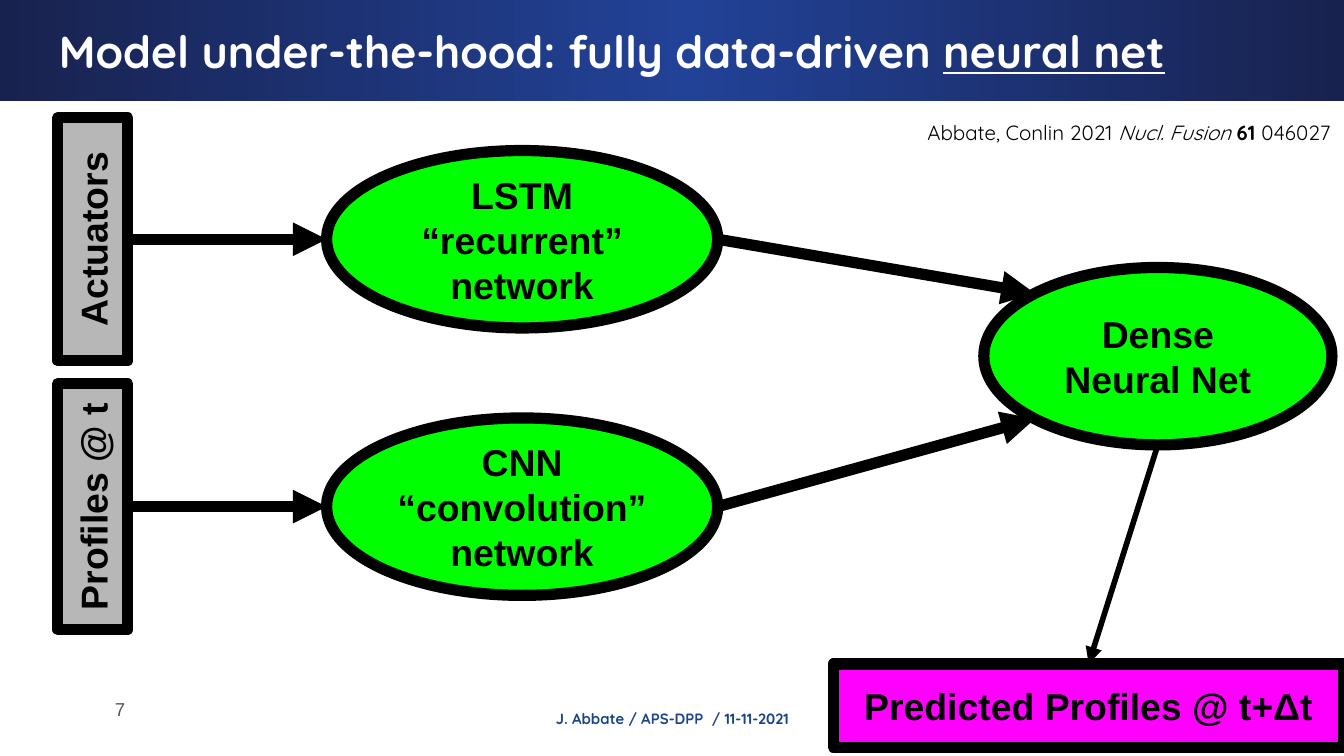
from copy import deepcopy
from dataclasses import dataclass
from math import sqrt

from lxml.etree import SubElement
from pptx import Presentation
from pptx.dml.color import RGBColor
from pptx.enum.shapes import MSO_CONNECTOR, MSO_SHAPE
from pptx.enum.text import MSO_ANCHOR, MSO_AUTO_SIZE, PP_ALIGN
from pptx.oxml.ns import qn
from pptx.util import Inches, Pt


@dataclass(frozen=True)
class Theme:
    heading: str = "Quicksand"
    body: str = "Arial"
    navy: str = "18224F"
    blue: str = "224297"
    footer: str = "1C4587"
    white: str = "FFFFFF"
    black: str = "000000"
    number: str = "595959"
    input: str = "B7B7B7"
    network: str = "00FF00"
    output: str = "FF00FF"
    title_size: int = 24
    node_size: int = 20
    cite_size: int = 11
    number_size: int = 10
    footer_size: int = 8
    thick: int = 6
    thin: int = 3


@dataclass(frozen=True)
class Box:
    x: float
    y: float
    w: float
    h: float

    @property
    def cx(self):
        return self.x + self.w / 2

    @property
    def cy(self):
        return self.y + self.h / 2

    @property
    def lengths(self):
        return [Inches(v) for v in (self.x, self.y, self.w, self.h)]

    def turned(self):
        return Box(self.cx - self.h / 2, self.cy - self.w / 2, self.h, self.w)

    def diagonal(self, side):
        return (self.cx - self.w / 2 / sqrt(2), self.cy + side * self.h / 2 / sqrt(2))


T = Theme()


def rgb(value):
    return RGBColor.from_string(value)


def write(shape, runs, size, font, color, bold=False, align=PP_ALIGN.CENTER,
          anchor=MSO_ANCHOR.MIDDLE):
    tf = shape.text_frame
    tf.word_wrap = True
    tf.vertical_anchor = anchor
    tf.margin_left = tf.margin_right = tf.margin_top = tf.margin_bottom = Inches(0.1)
    p = tf.paragraphs[0]
    p.alignment = align
    p.font.size = Pt(size)
    p.font.name = font
    p.font.bold = bold
    p.font.color.rgb = rgb(color)
    for text, style in runs:
        r = p.add_run()
        r.text = text
        for name, value in style.items():
            setattr(r.font, name, value)


def add_label(slide, box, runs, *args, grow=False, **kwargs):
    label = slide.shapes.add_textbox(*box.lengths)
    write(label, runs, *args, **kwargs)
    if grow:
        label.text_frame.auto_size = MSO_AUTO_SIZE.SHAPE_TO_FIT_TEXT


def add_header(slide, box):
    band = slide.shapes.add_shape(MSO_SHAPE.RECTANGLE, *box.lengths)
    band.shadow.inherit = False
    band.line.fill.background()
    band.fill.gradient()
    band.fill.gradient_angle = 0
    stops = band._element.spPr.find(".//" + qn("a:gsLst"))
    stops.insert(1, deepcopy(stops[0]))
    for stop, place, color in zip(band.fill.gradient_stops, (0, 0.51, 1),
                                  (T.navy, T.blue, T.navy)):
        stop.position = place
        stop.color.rgb = rgb(color)
    title = Box(box.x + 0.34, box.y + 0.07, box.w - 0.68, 0.63)
    add_label(slide, title,
              [("Model under-the-hood: fully data-driven ", {}),
               ("neural net", {"underline": True})],
              T.title_size, T.heading, T.white, bold=True, align=PP_ALIGN.LEFT)


def add_node(slide, box, text, color, kind=MSO_SHAPE.RECTANGLE, upright=False):
    placed = box.turned() if upright else box
    sp = slide.shapes.add_shape(kind, *placed.lengths)
    sp.rotation = 270 if upright else 0
    sp.shadow.inherit = False
    sp.fill.solid()
    sp.fill.fore_color.rgb = rgb(color)
    sp.line.color.rgb = rgb(T.black)
    sp.line.width = Pt(T.thick)
    SubElement(sp.line._get_or_add_ln(), qn("a:round"))
    write(sp, [(text, {})], T.node_size, T.body, T.black, bold=True)


def add_arrow(slide, start, end, width=T.thick):
    line = slide.shapes.add_connector(
        MSO_CONNECTOR.STRAIGHT, *[Inches(v) for v in (*start, *end)])
    line.line.color.rgb = rgb(T.black)
    line.line.width = Pt(width)
    SubElement(line.line._get_or_add_ln(), qn("a:tailEnd"), type="triangle")
    SubElement(line._element.spPr, qn("a:effectLst"))


def add_network(slide, box):
    dense = Box(box.x + 6.89, box.y + 1.12, 2.59, 1.32)
    output = Box(box.x + 5.77, box.y + 4.07, 3.8, 0.62)
    branches = [("Actuators", 1.81, "LSTM “recurrent” network", -1),
                ("Profiles @ t", 1.83, "CNN “convolution” network", 1)]
    for row, (source, height, network, side) in enumerate(branches):
        middle = box.y + 0.91 + 1.99 * row
        inlet = Box(box.x, middle - height / 2, 0.52, height)
        encoder = Box(box.x + 2, middle - 0.66, 2.91, 1.32)
        add_arrow(slide, (inlet.x + inlet.w, encoder.cy), (encoder.x, encoder.cy))
        add_arrow(slide, (encoder.x + encoder.w, encoder.cy), dense.diagonal(side))
        add_node(slide, inlet, source, T.input, upright=True)
        add_node(slide, encoder, network, T.network, MSO_SHAPE.OVAL)
    add_arrow(slide, (dense.cx, dense.y + dense.h), (output.cx, output.y), T.thin)
    add_node(slide, dense, "Dense Neural Net", T.network, MSO_SHAPE.OVAL)
    add_node(slide, output, "Predicted Profiles @ t+Δt", T.output)


def add_citation(slide, box):
    add_label(slide, box,
              [("Abbate, Conlin 2021 ", {}), ("Nucl. Fusion", {"italic": True}),
               (" 61 ", {"bold": True}), ("046027", {})],
              T.cite_size, T.heading, T.black, anchor=MSO_ANCHOR.TOP, grow=True)


def add_footer(slide, box):
    add_label(slide, Box(box.x + 1.05, box.y + 0.15, 7.05, 0.24),
              [("J. Abbate / APS-DPP  / 11-11-2021", {})],
              T.footer_size, T.heading, T.footer, bold=True,
              anchor=MSO_ANCHOR.TOP, grow=True)
    add_label(slide, Box(box.x, box.y, 0.6, box.h), [("7", {})],
              T.number_size, T.body, T.number, align=PP_ALIGN.RIGHT)


def main():
    prs = Presentation()
    prs.slide_width = Inches(10)
    prs.slide_height = prs.slide_width * 9 // 16
    slide = prs.slides.add_slide(prs.slide_layouts[6])
    add_footer(slide, Box(0.43, 5.06, 8.1, 0.43))
    add_header(slide, Box(0, -0.01, 10, 0.76))
    add_network(slide, Box(0.43, 0.87, 9.57, 4.69))
    add_citation(slide, Box(6.79, 0.8, 3.22, 0.39))
    prs.save("out.pptx")


if __name__ == "__main__":
    main()
